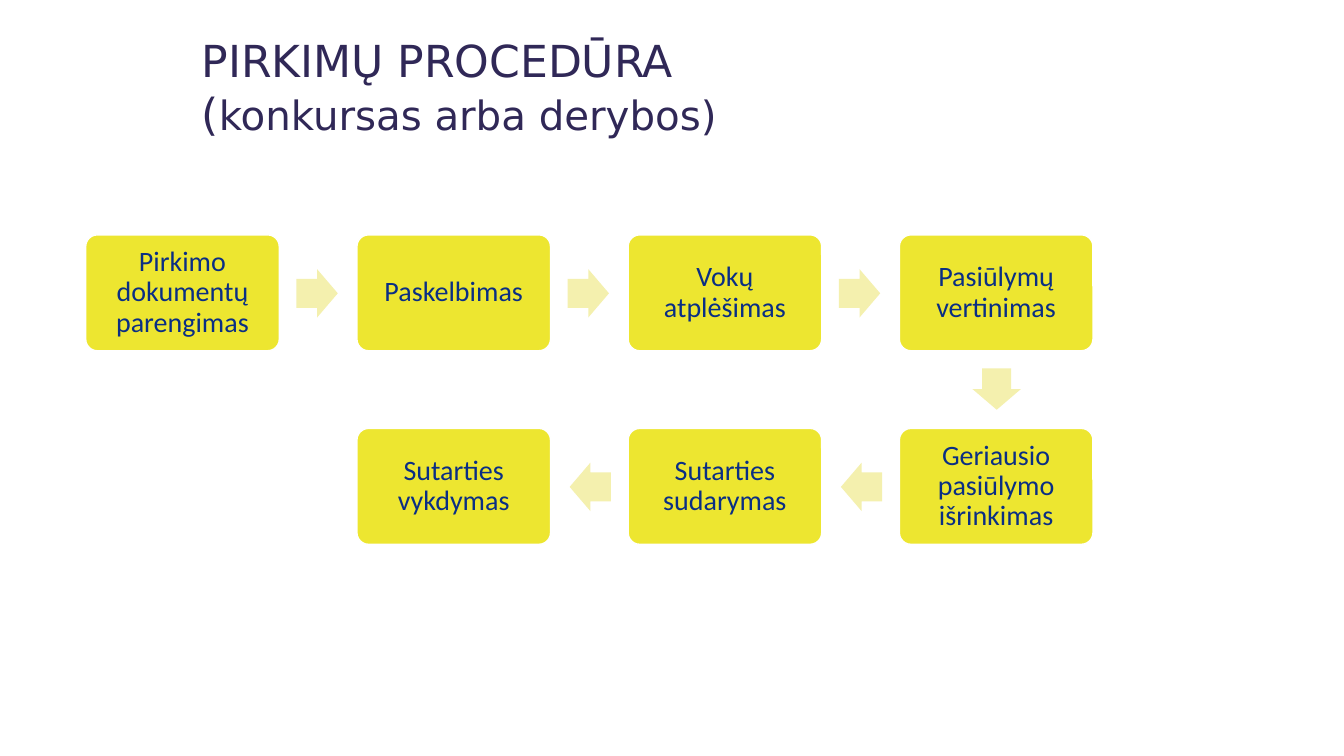
"""Build a slide showing the procurement procedure as a winding process."""
import pptx
import pptx.util
import pptx.dml.color
import pptx.enum.shapes
import pptx.enum.text

Inches = pptx.util.Inches
Pt = pptx.util.Pt
SHAPES = pptx.enum.shapes.MSO_SHAPE
MIDDLE = pptx.enum.text.MSO_ANCHOR.MIDDLE
ALIGN = pptx.enum.text.PP_ALIGN


def paint(color_format, color):
    """Set a font or line colour, or a solid fill, from a hex string."""
    if hasattr(color_format, "solid"):
        color_format.solid()
        color_format = color_format.fore_color
    color_format.rgb = pptx.dml.color.RGBColor.from_string(color)


def add_block(kind, left, top, width, height, color):
    """Add a plain filled shape to the slide."""
    block = slide.shapes.add_shape(
        kind, Inches(left), Inches(top), Inches(width), Inches(height))
    block.shadow.inherit = False
    paint(block.fill, color)
    return block


deck = pptx.Presentation()
deck.slide_width = Inches(13.33)
deck.slide_height = Inches(7.5)
slide = deck.slides.add_slide(deck.slide_layouts[5])

title = slide.shapes.title
title.left, title.top = Inches(1.9), Inches(0.23)
title.width, title.height = Inches(8.05), Inches(1.26)
title.text_frame.vertical_anchor = MIDDLE
heading = title.text_frame.paragraphs[0]
heading.alignment = ALIGN.LEFT
for words, size in [("PIRKIMŲ PROCEDŪRA\v(", 31.5), ("konkursas arba derybos)", 28.8)]:
    for number, line in enumerate(words.split("\v")):
        if number:
            heading.add_line_break()
        run = heading.add_run()
        run.text = line
        run.font.size = Pt(size)
        run.font.name = "DejaVu Sans"
        paint(run.font.color, "302857")

FIRST_LEFT, FIRST_TOP = 0.85, 2.33
COLUMN_STEP, ROW_STEP = 2.69, 1.92
STEP_WIDTH, STEP_HEIGHT = 1.92, 1.15
ARROW_WIDTH, ARROW_HEIGHT = 0.41, 0.48

steps = [
    ("Pirkimo dokumentų parengimas", 0, 0),
    ("Paskelbimas", 1, 0),
    ("Vokų atplėšimas", 2, 0),
    ("Pasiūlymų vertinimas", 3, 0),
    ("Geriausio pasiūlymo išrinkimas", 3, 1),
    ("Sutarties sudarymas", 2, 1),
    ("Sutarties vykdymas", 1, 1),
]
arrow_places = {
    0: (2.09, 0.34),
    90: (0.76, 1.29),
    180: (-0.58, 0.34),
}

for index, (label, column, row) in enumerate(steps):
    left = FIRST_LEFT + column * COLUMN_STEP
    top = FIRST_TOP + row * ROW_STEP
    step = add_block(SHAPES.ROUNDED_RECTANGLE, left, top, STEP_WIDTH, STEP_HEIGHT, "EDE630")
    step.adjustments[0] = 0.1
    paint(step.line.color, "FFFFFF")
    step.line.width = Pt(1)

    frame = step.text_frame
    frame.word_wrap = True
    frame.vertical_anchor = MIDDLE
    frame.margin_left = frame.margin_right = Inches(0.08)
    frame.margin_top = frame.margin_bottom = Inches(0.08)
    caption = frame.paragraphs[0]
    caption.text = label
    caption.alignment = ALIGN.CENTER
    caption.line_spacing = 0.9
    caption.font.size = Pt(20)
    caption.font.name = "Calibri"
    paint(caption.font.color, "0A2E84")

    if index + 1 < len(steps):
        next_row = steps[index + 1][2]
        turn = 90 if next_row > row else 180 * row
        across, down = arrow_places[turn]
        arrow = add_block(SHAPES.RIGHT_ARROW, left + across, top + down,
                          ARROW_WIDTH, ARROW_HEIGHT, "F4F0AE")
        arrow.adjustments[0] = 0.6
        arrow.adjustments[1] = 0.5
        arrow.line.fill.background()
        arrow.rotation = turn

deck.save("out.pptx")
